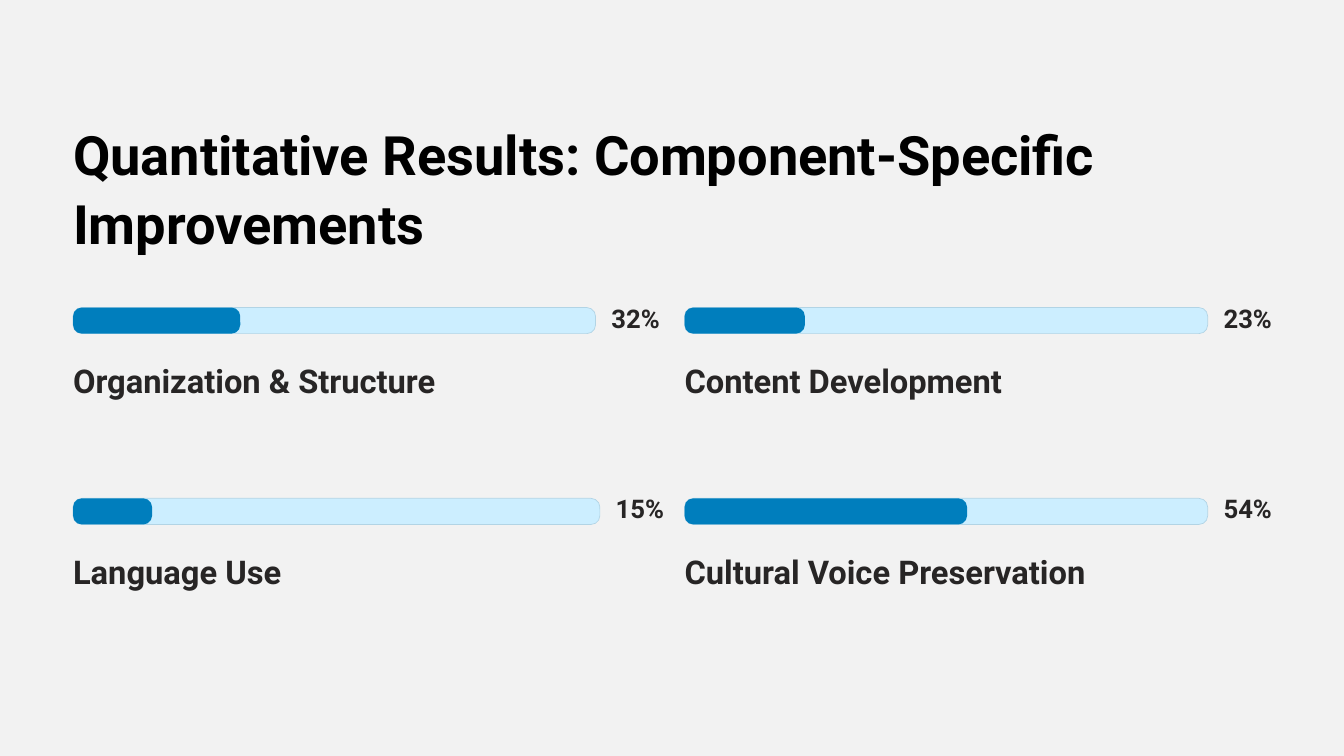
"""Build the slide of component-specific improvements as four progress bars."""
from pptx import Presentation
from pptx.dml.color import RGBColor
from pptx.enum import shapes, text
from pptx.util import Cm, Pt

TITLE = "Quantitative Results: Component-Specific Improvements"
COMPONENTS = [
    ("Organization & Structure", 32, 15.8),
    ("Content Development", 23, 15.82),
    ("Language Use", 15, 15.93),
    ("Cultural Voice Preservation", 54, 15.82),
]
COLORS = {
    "background": "F2F2F2",
    "title": "000000",
    "body": "272525",
    "track": "CCEEFF",
    "outline": "B2D4E5",
    "progress": "007EBD",
}
FONT = "Roboto"
LEFT, TOP = 2.21, 9.3
COLUMN_STEP, ROW_STEP = 18.49, 5.77
BAR_HEIGHT, PERCENT_GAP, LABEL_DROP = 0.79, 0.48, 1.57


def color(name):
    return RGBColor.from_string(COLORS[name])


def write(frame, words, size, spacing, ink, wrap=False):
    frame.margin_left = frame.margin_right = 0
    frame.margin_top = frame.margin_bottom = 0
    frame.word_wrap = wrap
    frame.auto_size = text.MSO_AUTO_SIZE.NONE
    frame.vertical_anchor = text.MSO_ANCHOR.TOP
    line = frame.paragraphs[0]
    line.alignment = text.PP_ALIGN.LEFT
    line.line_spacing = Pt(spacing)
    line.space_before = Pt(0)
    run = line.add_run()
    run.text = words
    run.font.name = FONT
    run.font.size = Pt(size)
    run.font.bold = True
    run.font.color.rgb = color(ink)


def add_bar(slide, left, top, width, fill, outline=None):
    bar = slide.shapes.add_shape(
        shapes.MSO_SHAPE.ROUNDED_RECTANGLE,
        Cm(left), Cm(top), Cm(width), Cm(BAR_HEIGHT))
    bar.adjustments[0] = 0.336
    bar.shadow.inherit = False
    bar.fill.solid()
    bar.fill.fore_color.rgb = color(fill)
    if outline:
        bar.line.color.rgb = color(outline)
        bar.line.width = Pt(0.6)
    else:
        bar.line.fill.background()


def add_text(slide, left, top, width, height, words, size, spacing):
    box = slide.shapes.add_textbox(Cm(left), Cm(top), Cm(width), Cm(height))
    write(box.text_frame, words, size, spacing, "body")


def add_component(slide, index, label, percent, track):
    row, column = divmod(index, 2)
    left = LEFT + column * COLUMN_STEP
    top = TOP + row * ROW_STEP
    add_bar(slide, left, top, track, "track", "outline")
    add_bar(slide, left, top, track * percent / 100, "progress")
    add_text(slide, left + track + PERCENT_GAP, top, 1.45, BAR_HEIGHT,
             f"{percent}%", 22, 22)
    add_text(slide, left, top + LABEL_DROP, 12.5, 1.24, label, 28, 35)


def main():
    deck = Presentation()
    deck.slide_width, deck.slide_height = Cm(40.64), Cm(22.86)
    slide = deck.slides.add_slide(deck.slide_layouts[5])
    slide.background.fill.solid()
    slide.background.fill.fore_color.rgb = color("background")
    title = slide.shapes.title
    title.left, title.top = Cm(LEFT), Cm(3.58)
    title.width, title.height = Cm(36.22), Cm(4.14)
    write(title.text_frame, TITLE, 46.5, 58.5, "title", wrap=True)
    for index, component in enumerate(COMPONENTS):
        add_component(slide, index, *component)
    deck.save("out.pptx")


if __name__ == "__main__":
    main()
